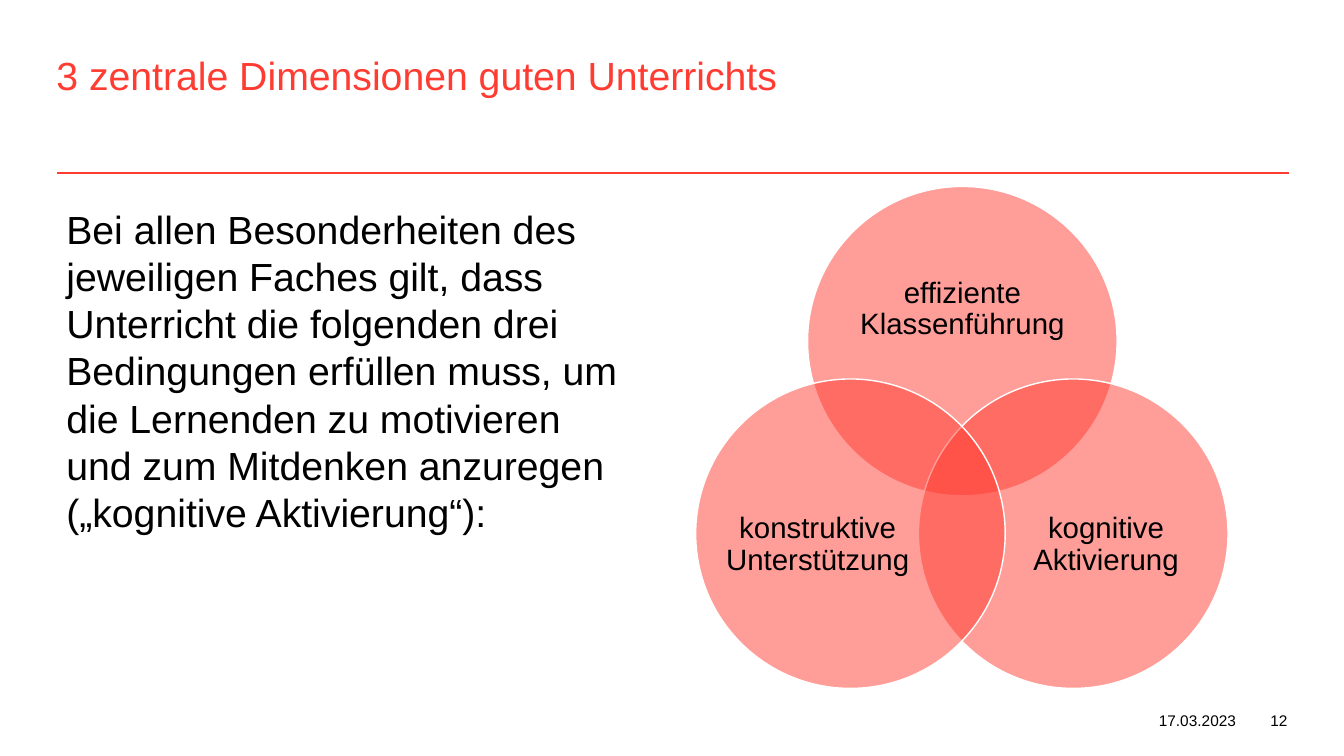
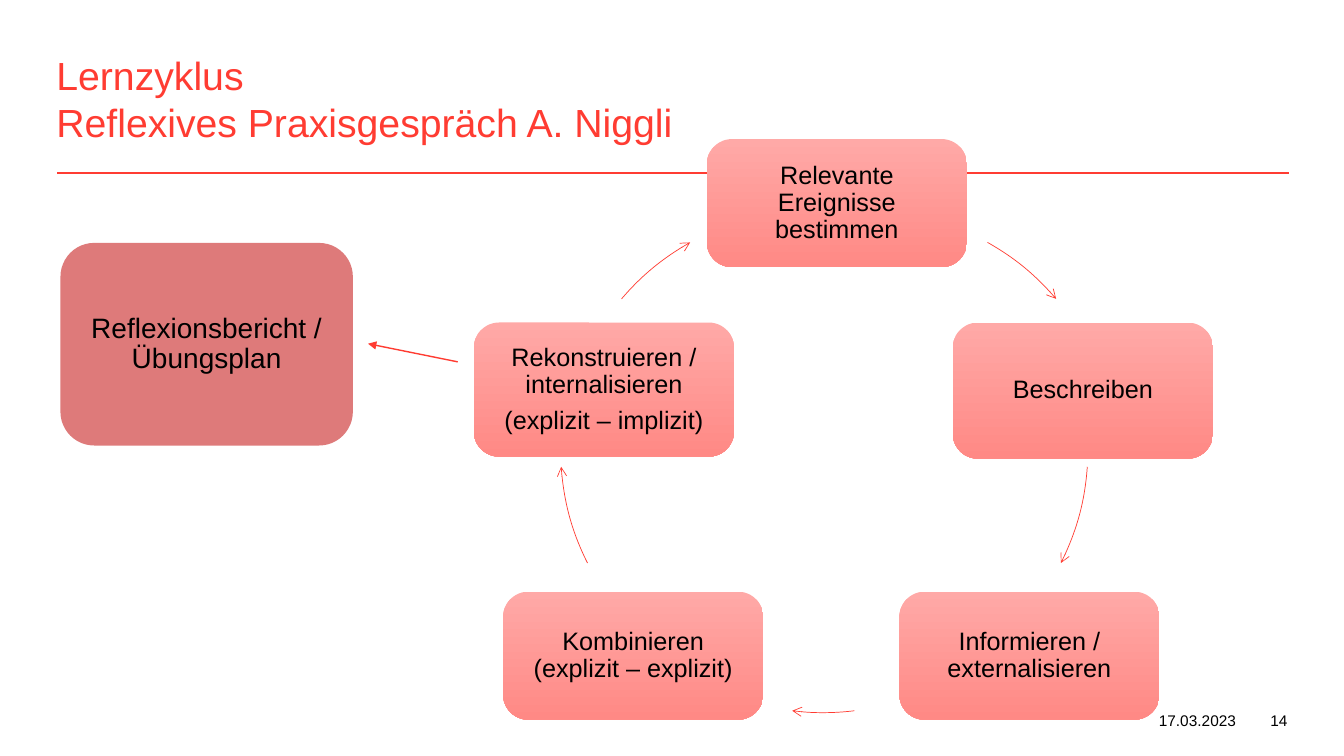
from lxml import etree
from pptx import Presentation
from pptx.dml.color import RGBColor
from pptx.enum.shapes import MSO_CONNECTOR as Connector, MSO_SHAPE as Preset
from pptx.enum.text import MSO_ANCHOR as Anchor, PP_ALIGN as Align
from pptx.oxml.ns import qn
from pptx.util import Inches, Pt

FONT = "Arial"
RED = "FF3C32"
DARK_RED = "C00000"
BLACK = "000000"
WHITE = "FFFFFF"
STEP_TOP = "FFA9A7"
STEP_BOTTOM = "FF8985"
DATE = "17.03.2023"
CIRCLE_SIZE = 3.07
ARC_SIZE = 5.05
STEP_WIDTH = 2.58
STEP_RADIUS = 0.25

BODY = (
    "Bei allen Besonderheiten des jeweiligen Faches gilt, dass Unterricht "
    "die folgenden drei Bedingungen erfüllen muss, um die Lernenden zu "
    "motivieren und zum Mitdenken anzuregen („kognitive Aktivierung“):"
)
DIMENSIONS = [
    ("effiziente Klassenführung", (8.01, 1.85), (8.42, 2.38, 2.25, 1.38)),
    ("kognitive Aktivierung", (9.11, 3.76), (10.05, 4.56, 1.84, 1.69)),
    ("konstruktive Unterstützung", (6.9, 3.76), (7.19, 4.56, 1.84, 1.69)),
]
STEPS = [
    ("Relevante Ereignisse bestimmen", 7.01, 1.38, 1.27),
    ("Beschreiben", 9.45, 3.2, 1.35),
    ("Informieren / externalisieren", 8.92, 5.87, 1.27),
    ("Kombinieren (explizit – explizit)", 4.99, 5.87, 1.27),
    ("Rekonstruieren / internalisieren\n(explizit – implizit)", 4.7, 3.2, 1.33),
]
ARCS = [
    (6.03, 2.08, 299.4, 319.5),
    (5.74, 1.93, 4, 26.6),
    (5.64, 2.02, 83, 97),
    (5.56, 1.93, 153.4, 176),
    (5.56, 2.08, 220.5, 240.6),
]


def color(value):
    return RGBColor.from_string(value)


def write(shape, text, size=18, fill=BLACK, align=Align.LEFT, anchor=Anchor.TOP,
          inset=0, spacing=None):
    frame = shape.text_frame
    frame.word_wrap = True
    frame.vertical_anchor = anchor
    frame.margin_left = frame.margin_right = Inches(inset)
    frame.margin_top = frame.margin_bottom = Inches(inset)
    frame.text = text
    for paragraph in frame.paragraphs:
        paragraph.alignment = align
        if spacing:
            paragraph.line_spacing = spacing
            paragraph.space_after = Pt(0.35 * size)
        for run in paragraph.runs:
            run.font.name = FONT
            run.font.size = Pt(size)
            run.font.color.rgb = color(fill)


def write_label(shape, text, **options):
    write(shape, text, align=Align.CENTER, anchor=Anchor.MIDDLE, spacing=0.9, **options)


def add_text_box(slide, box):
    return slide.shapes.add_textbox(*map(Inches, box))


def add_preset(slide, preset, box):
    shape = slide.shapes.add_shape(preset, *map(Inches, box))
    shape.shadow.inherit = False
    shape.line.fill.background()
    return shape


def fill_transparent(shape, value, opacity):
    shape.fill.solid()
    shape.fill.fore_color.rgb = color(value)
    element = shape.fill._xPr.find(qn("a:solidFill"))[0]
    etree.SubElement(element, qn("a:alpha"), val=str(opacity * 1000))


def style_line(shape, width, value=RED, arrowhead=None):
    shape.line.color.rgb = color(value)
    shape.line.width = Pt(width)
    if arrowhead:
        etree.SubElement(shape.line._get_or_add_ln(), qn("a:tailEnd"), type=arrowhead)


def add_line(slide, start, end, width, arrowhead=None):
    points = map(Inches, (*start, *end))
    connector = slide.shapes.add_connector(Connector.STRAIGHT, *points)
    style_line(connector, width, arrowhead=arrowhead)
    etree.SubElement(connector._element.spPr, qn("a:effectLst"))


def add_circle(slide, position):
    circle = add_preset(slide, Preset.OVAL, (*position, CIRCLE_SIZE, CIRCLE_SIZE))
    fill_transparent(circle, RED, 50)
    style_line(circle, 1, WHITE)


def add_step(slide, text, left, top, height):
    step = add_preset(slide, Preset.ROUNDED_RECTANGLE, (left, top, STEP_WIDTH, height))
    step.adjustments[0] = STEP_RADIUS / height
    step.fill.gradient()
    step.fill.gradient_angle = 270
    for stop, value in zip(step.fill.gradient_stops, (STEP_TOP, STEP_BOTTOM)):
        stop.color.rgb = color(value)
    write_label(step, text, size=18, inset=0.07)


def add_arc(slide, left, top, start, end):
    arc = add_preset(slide, Preset.ARC, (left, top, ARC_SIZE, ARC_SIZE))
    for index, angle in enumerate((start, end)):
        arc.adjustments[index] = angle * 0.6
    arc.fill.background()
    style_line(arc, 0.5, arrowhead="arrow")


def add_base_slide(presentation, title, number):
    slide = presentation.slides.add_slide(presentation.slide_layouts[6])
    add_line(slide, (0.57, 1.72), (12.78, 1.72), 1.5)
    write(add_text_box(slide, (0.56, 0.51, 12.2, 0.95)), title, size=28, fill=RED)
    for text, left, width in ((DATE, 10.84, 1.42), (number, 12.42, 0.35)):
        footer = add_text_box(slide, (left, 7.06, width, 0.16))
        write(footer, text, size=11, align=Align.RIGHT)
    return slide


def add_dimensions_slide(presentation):
    slide = add_base_slide(presentation, "3 zentrale Dimensionen guten Unterrichts", "12")
    body = add_text_box(slide, (0.56, 1.99, 5.83, 4.91))
    write(body, BODY, size=28)
    body.text_frame.margin_left = body.text_frame.margin_right = Inches(0.1)
    body.text_frame.margin_top = body.text_frame.margin_bottom = Inches(0.05)
    for text, position, label_box in DIMENSIONS:
        add_circle(slide, position)
        write_label(add_text_box(slide, label_box), text, size=21)


def add_cycle_slide(presentation):
    title = "Lernzyklus\vReflexives Praxisgespräch A. Niggli"
    slide = add_base_slide(presentation, title, "14")
    for step, arc in zip(STEPS, ARCS):
        add_step(slide, *step)
        add_arc(slide, *arc)
    add_line(slide, (4.54, 3.59), (3.65, 3.41), 1, arrowhead="triangle")
    report = add_preset(slide, Preset.ROUNDED_RECTANGLE, (0.6, 2.41, 2.9, 2.01))
    fill_transparent(report, DARK_RED, 52)
    write_label(report, "Reflexionsbericht / Übungsplan", size=20, inset=0.06)


def main():
    presentation = Presentation()
    presentation.slide_width = Inches(13.33)
    presentation.slide_height = Inches(7.5)
    add_dimensions_slide(presentation)
    add_cycle_slide(presentation)
    presentation.save("out.pptx")


if __name__ == "__main__":
    main()
